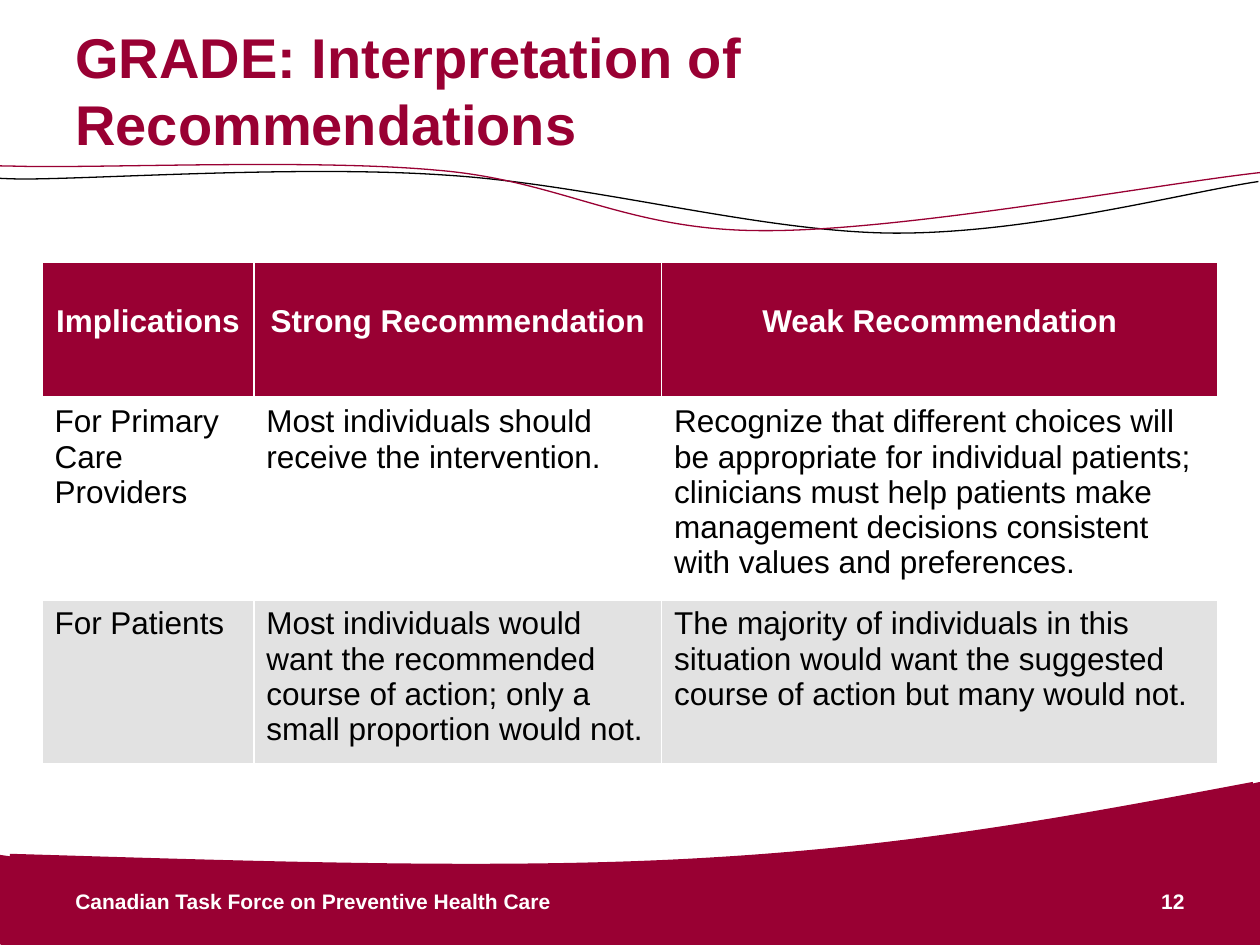
from dataclasses import dataclass

from lxml.etree import SubElement
from pptx import Presentation
from pptx.dml.color import RGBColor
from pptx.enum.text import MSO_ANCHOR as Anchor, PP_ALIGN as Align
from pptx.oxml.ns import qn
from pptx.util import Cm, Pt


@dataclass(frozen=True)
class Theme:
    font: str = "Arial"
    maroon: str = "990033"
    black: str = "000000"
    white: str = "FFFFFF"
    grey: str = "D9D9D9"
    grey_alpha: int = 75000
    title: int = 32
    body: int = 18
    footer: int = 12


theme = Theme()


def write(frame, text, size, color, bold, align=Align.LEFT):
    frame.word_wrap = True
    para = frame.paragraphs[0]
    para.alignment = align
    span = para.add_run()
    span.text = text
    span.font.name = theme.font
    span.font.size = Pt(size)
    span.font.bold = bold
    span.font.color.rgb = RGBColor.from_string(color)


def trace(start, steps, color, width, filled=False):
    builder = page.shapes.build_freeform(Cm(start[0]), Cm(start[1]))
    builder.add_line_segments([(Cm(x), Cm(y)) for step in steps for x, y in step], close=filled)
    shape = builder.convert_to_shape()
    outline = next(shape._element.iter(qn("a:path")))
    lines = iter(outline.findall(qn("a:lnTo")))
    for step in steps:
        first, *others = [next(lines) for point in step]
        if others:
            curve = SubElement(outline, qn("a:cubicBezTo"))
            first.addprevious(curve)
            for line in (first, *others):
                curve.append(line[0])
                outline.remove(line)
    shape.shadow.inherit = False
    shape.line.color.rgb = RGBColor.from_string(color)
    shape.line.width = Pt(width)
    if filled:
        shape.fill.solid()
        shape.fill.fore_color.rgb = RGBColor.from_string(color)
    else:
        shape.fill.background()


deck = Presentation()
deck.slide_width, deck.slide_height = Cm(25.4), Cm(19.05)
page = deck.slides.add_slide(deck.slide_layouts[6])

black_wave = [[(-0.1, 3.45), (-1.09, 3.58), (0.43, 3.61)],
              [(1.98, 3.61), (6.05, 3.33), (8.97, 3.53)],
              [(11.91, 3.71), (15.27, 4.67), (17.98, 4.7)],
              [(20.73, 4.72), (23.83, 3.89), (25.37, 3.66)]]
maroon_wave = [[(-0.56, 3.2), (-1.27, 3.33), (0.3, 3.35)],
               [(1.91, 3.4), (6.27, 3.2), (8.79, 3.43)],
               [(11.3, 3.63), (12.6, 4.65), (15.37, 4.65)],
               [(18.14, 4.67), (23.32, 3.71), (25.4, 3.48)]]
band_edge = [[(5.21, 17.45), (10.24, 17.63), (14.4, 17.37)],
             [(18.59, 17.12), (21.92, 16.48), (25.27, 15.85)]]
band_corners = [(0, 17.27), (0.71, 17.37), (1.73, 17.37), (2.97, 17.42), (4.52, 17.45),
                (6.71, 17.5), (8.33, 17.53), (11.51, 17.53), (12.6, 17.45), (14.81, 17.37),
                (16.33, 17.22), (19.48, 16.89), (21.29, 16.61), (23.19, 16.23)]
band = [[corner] for corner in band_corners] + [
    [(23.65, 16.15), (24.1, 15.98), (24.59, 15.98)], [(25.4, 15.8)], [(25.4, 19.15)]]
trace((-0.23, 3.4), black_wave, theme.black, 0.75)
trace((-0.71, 3.18), maroon_wave, theme.maroon, 0.75)
trace((0.2, 17.3), band_edge, theme.maroon, 5)
trace((0.03, 19.02), band, theme.maroon, 2, filled=True)

labels = [
    ("GRADE: Interpretation of Recommendations", 1.27, 0.22, 22.86, 3.18,
     theme.title, theme.maroon, Align.LEFT),
    ("Canadian Task Force on Preventive Health Care", 1.27, 17.65, 15.44, 1.02,
     theme.footer, theme.white, Align.LEFT),
    ("12", 18.21, 17.65, 5.92, 1.02, theme.footer, theme.white, Align.RIGHT),
]
for text, left, top, width, height, size, color, align in labels:
    box = page.shapes.add_textbox(Cm(left), Cm(top), Cm(width), Cm(height))
    box.text_frame.vertical_anchor = Anchor.MIDDLE
    write(box.text_frame, text, size, color, True, align)

rows = [
    ("Implications", "Strong Recommendation", "Weak Recommendation"),
    ("For Primary Care Providers", "Most individuals should receive the intervention.",
     "Recognize that different choices will be appropriate for individual patients; clinicians "
     "must help patients make management decisions consistent with values and preferences."),
    ("For Patients",
     "Most individuals would want the recommended course of action; only a small proportion would not.",
     "The majority of individuals in this situation would want the suggested course of action "
     "but many would not."),
]
row_fills = [theme.maroon, theme.white, theme.grey]
column_widths = [4.27, 8.22, 11.21]
row_heights = [2.74, 4.06, 3.3]
table = page.shapes.add_table(len(rows), len(column_widths), Cm(0.85), Cm(5.28),
                              Cm(sum(column_widths)), Cm(sum(row_heights))).table
for column, width in zip(table.columns, column_widths):
    column.width = Cm(width)
for index, (texts, fill, height) in enumerate(zip(rows, row_fills, row_heights)):
    table.rows[index].height = Cm(height)
    header = index == 0
    for cell, text in zip(table.rows[index].cells, texts):
        cell.margin_left = cell.margin_right = Cm(0.25)
        cell.margin_top = Cm(0.85 if header else 0.13)
        cell.margin_bottom = Cm(0.13)
        write(cell.text_frame, text, theme.body, theme.white if header else theme.black,
              header, Align.CENTER if header else Align.LEFT)
        properties = cell._tc.get_or_add_tcPr()
        for side in ("lnL", "lnR", "lnT", "lnB"):
            thick = (index, side) in ((0, "lnB"), (1, "lnT"))
            border = SubElement(properties, qn(f"a:{side}"), w=str(Pt(3 if thick else 1)))
            paint = SubElement(border, qn("a:solidFill"))
            SubElement(paint, qn("a:srgbClr"), val=theme.white)
        cell.fill.solid()
        cell.fill.fore_color.rgb = RGBColor.from_string(fill)
        if fill == theme.grey:
            tint = properties.find(qn("a:solidFill"))[0]
            SubElement(tint, qn("a:alpha"), val=str(theme.grey_alpha))

deck.save("out.pptx")
